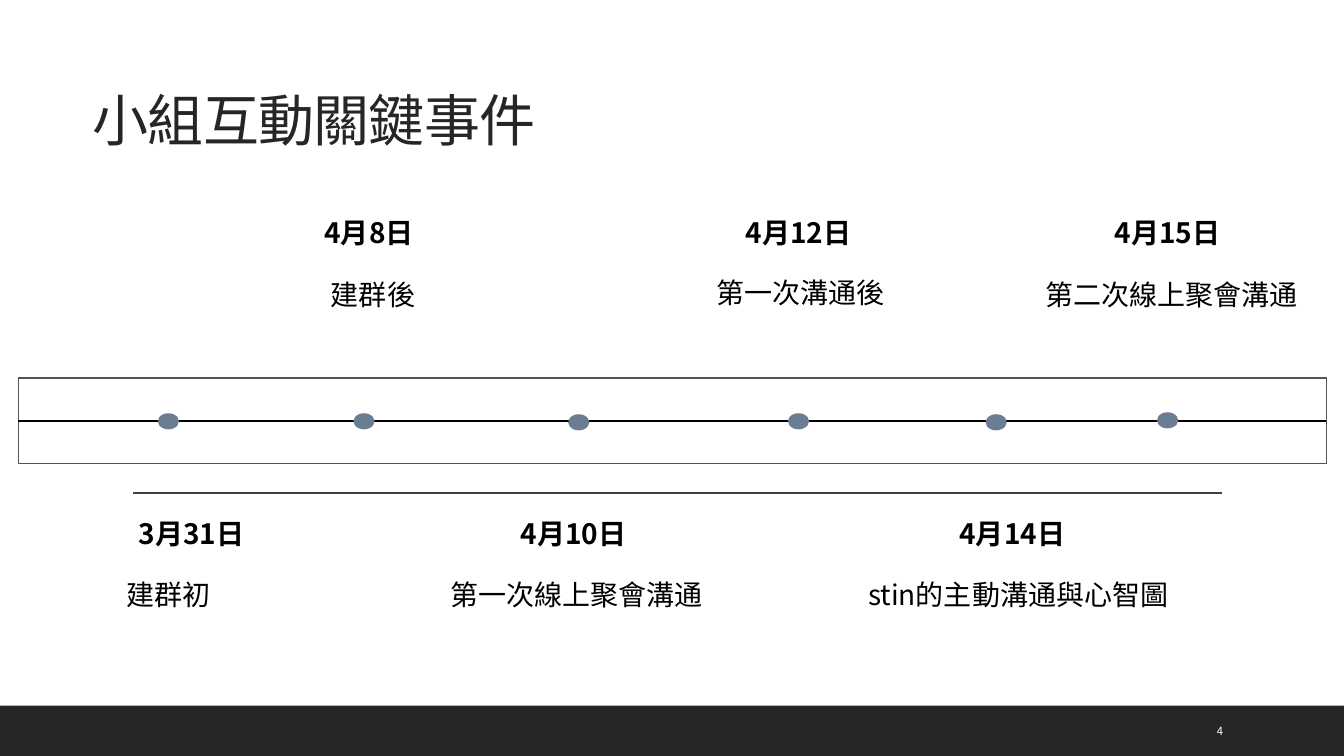
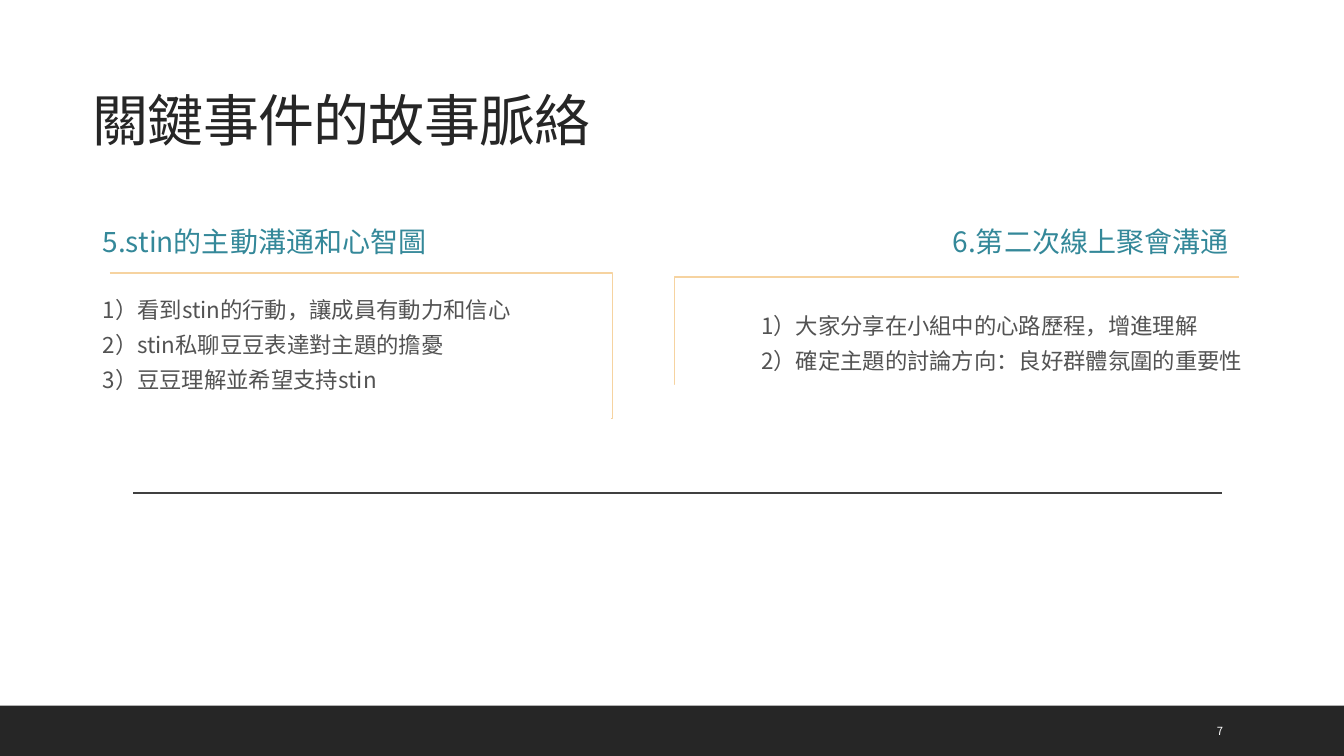
import pptx
import pptx.util
import pptx.dml.color
import pptx.enum.shapes
import pptx.enum.text
import pptx.oxml
import pptx.oxml.ns
from dataclasses import dataclass

Inches = pptx.util.Inches
Pt = pptx.util.Pt
Shape = pptx.enum.shapes.MSO_SHAPE
Line = pptx.enum.shapes.MSO_CONNECTOR
Align = pptx.enum.text.PP_ALIGN
Anchor = pptx.enum.text.MSO_ANCHOR
qn = pptx.oxml.ns.qn


@dataclass(frozen=True)
class Theme:
    font: str = "Noto Sans CJK SC"
    dark: str = "262626"
    rule: str = "404040"
    gray: str = "535353"
    black: str = "000000"
    white: str = "FFFFFF"
    dot: str = "6A7D93"
    teal: str = "348899"
    sand: str = "F6D3A0"
    title: float = 40
    head: float = 20
    body: float = 16
    page: float = 8


THEME = Theme()

EVENTS = [
    ("3月31日", "建群初", 1.90, 1.67, 5.58, 1.67, 4.18),
    ("4月8日", "建群後", 3.66, 3.70, 2.60, 3.61, 4.18),
    ("4月10日", "第一次線上聚會溝通", 5.69, 5.72, 5.58, 5.74, 4.19),
    ("4月12日", "第一次溝通後", 7.92, 7.94, 2.58, 7.92, 4.18),
    ("4月14日", "stin的主動溝通與心智圖", 10.04, 10.10, 5.58, 9.88, 4.19),
    ("4月15日", "第二次線上聚會溝通", 11.58, 11.62, 2.60, 11.58, 4.17),
]


def rgb(color):
    return pptx.dml.color.RGBColor.from_string(color)


def add_text(slide, text, left, top, width, height, *, size=THEME.head,
             color=THEME.black, bold=False, align=Align.LEFT, space=1.0,
             anchor=Anchor.TOP, side=0.1, wrap=True, track=0):
    box = slide.shapes.add_textbox(
        Inches(left), Inches(top), Inches(width), Inches(height))
    frame = box.text_frame
    frame.word_wrap = wrap
    frame.vertical_anchor = anchor
    frame.margin_left = frame.margin_right = Inches(side)
    frame.text = text
    for para in frame.paragraphs:
        para.alignment = align
        para.line_spacing = space
        for run in para.runs:
            font = run.font
            font.name = THEME.font
            font.size = Pt(size)
            font.bold = bold
            font.color.rgb = rgb(color)
            props = run._r.get_or_add_rPr()
            east = pptx.oxml.parse_xml(
                '<a:ea xmlns:a="http://schemas.openxmlformats.org/'
                f'drawingml/2006/main" typeface="{THEME.font}"/>')
            props.find(qn("a:latin")).addnext(east)
            if track:
                props.set("spc", str(track))
    return box


def add_form(slide, kind, left, top, width, height, fill, edge=None):
    form = slide.shapes.add_shape(
        kind, Inches(left), Inches(top), Inches(width), Inches(height))
    form.shadow.inherit = False
    form.fill.solid()
    form.fill.fore_color.rgb = rgb(fill)
    if edge:
        form.line.color.rgb = rgb(edge)
        form.line.width = Pt(0.75)
    else:
        form.line.fill.background()
    return form


def add_line(slide, start, end, color, weight=1, kind=Line.STRAIGHT):
    line = slide.shapes.add_connector(
        kind, *(Inches(value) for value in (*start, *end)))
    line.line.color.rgb = rgb(color)
    line.line.width = Pt(weight)
    props = line._element.spPr
    props.append(props.makeelement(qn("a:effectLst"), {}))
    return line


def add_hook(slide, start, end, bend):
    hook = add_line(slide, start, end, THEME.sand, kind=Line.ELBOW)
    geom = hook._element.spPr.find(qn("a:prstGeom"))
    guides = geom.find(qn("a:avLst"))
    guides.append(guides.makeelement(
        qn("a:gd"), {"name": "adj1", "fmla": f"val {bend}"}))


def add_slide(deck, title, page):
    slide = deck.slides.add_slide(deck.slide_layouts[6])
    add_form(slide, Shape.RECTANGLE, 0, 7, 13.33, 0.5, THEME.dark)
    add_line(slide, (1.32, 4.89), (12.12, 4.89), THEME.rule)
    add_text(slide, title, 0.87, 0.48, 11, 1.09, size=THEME.title,
             color=THEME.dark, space=0.9, anchor=Anchor.BOTTOM,
             side=0.05, track=-50)
    add_text(slide, page, 12.02, 7.13, 0.16, 0.24, size=THEME.page,
             color=THEME.white, anchor=Anchor.MIDDLE, side=0.05, wrap=False)
    return slide


def add_event(slide, date, label, date_x, label_x, label_y, dot_x, dot_y):
    date_y = 2.09 if label_y < dot_y else 5.07
    wide = 3.54
    add_form(slide, Shape.OVAL, dot_x - 0.105, dot_y - 0.08, 0.21, 0.16,
             THEME.dot)
    add_text(slide, date, date_x - 0.87, date_y, 1.74, 0.44,
             bold=True, align=Align.CENTER)
    add_text(slide, label, label_x - wide / 2, label_y, wide, 0.48,
             align=Align.CENTER, space=1.3)


def add_story(slide, head, head_at, points, points_at, start, end, bend):
    add_hook(slide, start, end, bend)
    add_text(slide, head, *head_at, 0.44, color=THEME.teal)
    add_text(slide, "\n".join(points), *points_at, 1.1, size=THEME.body,
             color=THEME.gray, space=1.3)


def main():
    deck = pptx.Presentation()
    deck.slide_width = Inches(13.33)
    deck.slide_height = Inches(7.5)

    slide = add_slide(deck, "小組互動關鍵事件", "4")
    add_form(slide, Shape.RECTANGLE, 0.18, 3.75, 12.98, 0.85,
             THEME.white, THEME.gray)
    add_line(slide, (0.18, 4.18), (13.15, 4.18), THEME.black, 1.5)
    for event in EVENTS:
        add_event(slide, *event)

    slide = add_slide(deck, "關鍵事件的故事脈絡", "7")
    add_story(slide, "5.stin的主動溝通和心智圖", (0.92, 2.18, 4.16),
              ["1）看到stin的行動，讓成員有動力和信心",
               "2）stin私聊豆豆表達對主題的擔憂",
               "3）豆豆理解並希望支持stin"],
              (0.92, 2.81, 5.14), (1.09, 2.71), (6.06, 4.15), 100300)
    add_story(slide, "6.第二次線上聚會溝通", (9.35, 2.18, 3.2),
              ["1）大家分享在小組中的心路歷程，增進理解",
               "2）確定主題的討論方向：良好群體氛圍的重要性"],
              (7.45, 2.97, 5.1), (12.29, 2.75), (6.7, 3.81), 100200)

    deck.save("out.pptx")


if __name__ == "__main__":
    main()
